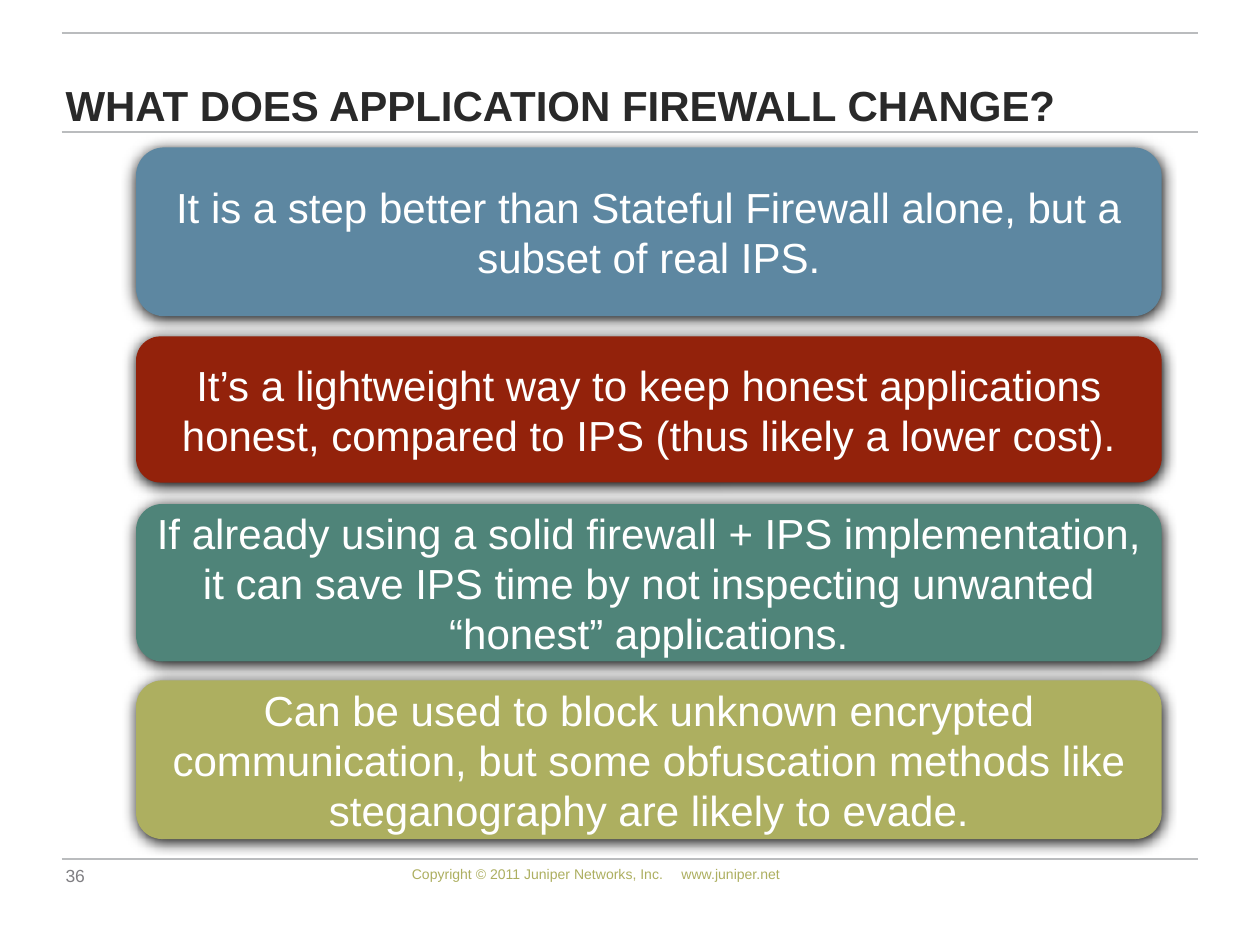
from dataclasses import dataclass

from lxml import etree
from pptx import Presentation
from pptx import util as u
from pptx.dml.color import RGBColor
from pptx.enum import shapes, text
from pptx.oxml import ns


@dataclass(frozen=True)
class Theme:
    face: str = "Arial"
    ink: str = "292929"
    gray: str = "807F83"
    rule: str = "BABCBE"
    blue: str = "5D87A1"
    red: str = "93220B"
    green: str = "4F8479"
    olive: str = "ADAF60"
    white: str = "FFFFFF"
    shade: str = "000000"
    big: int = 24
    small: int = 10
    tiny: int = 8


T = Theme()
WIDE, HIGH = 10, 7.5
LEFT, RIGHT = 0.49, 9.51
RULES = (0.26, 1.05, 6.82)
CARD_X, CARD_W = 1.08, 8.14
CARDS = (
    (1.17, 1.34, T.blue,
     "It is a step better than Stateful Firewall alone, but a subset of real IPS."),
    (2.67, 1.16, T.red,
     "It’s a lightweight way to keep honest applications honest, "
     "compared to IPS (thus likely a lower cost)."),
    (4, 1.25, T.green,
     "If already using a solid firewall + IPS implementation, it can save IPS time "
     "by not inspecting unwanted “honest” applications."),
    (5.4, 1.26, T.olive,
     "Can be used to block unknown encrypted communication, but some obfuscation "
     "methods like steganography are likely to evade."),
)


def rgb(code):
    return RGBColor.from_string(code)


def add(parent, tag, **attrs):
    return etree.SubElement(parent, ns.qn(tag), attrs)


def place(shape, x, y, w, h):
    shape.left, shape.top = u.Inches(x), u.Inches(y)
    shape.width, shape.height = u.Inches(w), u.Inches(h)


def write(shape, words, size, color, pads, anchor, align=text.PP_ALIGN.LEFT,
          bold=False, tab=None):
    frame = shape.text_frame
    frame.word_wrap = True
    frame.auto_size = text.MSO_AUTO_SIZE.NONE
    frame.vertical_anchor = anchor
    (frame.margin_left, frame.margin_top,
     frame.margin_right, frame.margin_bottom) = map(u.Inches, pads)
    para = frame.paragraphs[0]
    para.text = words
    para.alignment = align
    if tab:
        stops = add(para._p.get_or_add_pPr(), "a:tabLst")
        add(stops, "a:tab", pos=str(u.Inches(tab)), algn="l")
    font = para.font
    font.name, font.size, font.bold = T.face, u.Pt(size), bold
    font.color.rgb = rgb(color)
    return para


def title(slide, words):
    head = slide.shapes.title
    place(head, 0.52, 0.28, 8.99, 0.81)
    para = write(head, words, T.big, T.ink, (0, 0.05, 0.1, 0.05),
                 text.MSO_ANCHOR.BOTTOM, bold=True)
    para.line_spacing = 0.9


def rule(slide, y):
    line = slide.shapes.add_connector(
        shapes.MSO_CONNECTOR.STRAIGHT,
        *map(u.Inches, (LEFT, y, RIGHT, y)))
    line.line.color.rgb = rgb(T.rule)
    line.line.width = u.Pt(1)
    add(line._element.spPr, "a:effectLst")


def label(slide, box, *style, **more):
    note = slide.shapes.add_textbox(*map(u.Inches, box))
    write(note, *style, **more)


def glow(shape):
    shape.shadow.inherit = False
    effects = shape._element.spPr.find(ns.qn("a:effectLst"))
    cast = add(effects, "a:outerShdw", blurRad=str(u.Pt(8.5)),
               dist=str(u.Pt(1)), dir="5400000", rotWithShape="0")
    add(cast, "a:srgbClr", val=T.shade)


def card(slide, y, h, color, words):
    box = slide.shapes.add_shape(
        shapes.MSO_SHAPE.ROUNDED_RECTANGLE,
        *map(u.Inches, (CARD_X, y, CARD_W, h)))
    box.fill.solid()
    box.fill.fore_color.rgb = rgb(color)
    box.line.fill.background()
    glow(box)
    write(box, words, T.big, T.white, (0.1,) * 4,
          text.MSO_ANCHOR.MIDDLE, text.PP_ALIGN.CENTER)


def main():
    deck = Presentation()
    deck.slide_width, deck.slide_height = u.Inches(WIDE), u.Inches(HIGH)
    slide = deck.slides.add_slide(deck.slide_layouts[5])
    label(slide, (0.52, 6.81, 0.58, 0.22), "36", T.small, T.gray,
          (0,) * 4, text.MSO_ANCHOR.BOTTOM)
    for y in RULES:
        rule(slide, y)
    label(slide, (3.17, 6.82, 3.25, 0.24),
          "Copyright © 2011 Juniper Networks, Inc.\twww.juniper.net",
          T.tiny, T.olive, (0.1, 0.05, 0.1, 0.05), text.MSO_ANCHOR.TOP, tab=2.14)
    title(slide, "WHAT DOES APPLICATION FIREWALL CHANGE?")
    for item in CARDS:
        card(slide, *item)
    deck.save("out.pptx")


if __name__ == "__main__":
    main()
